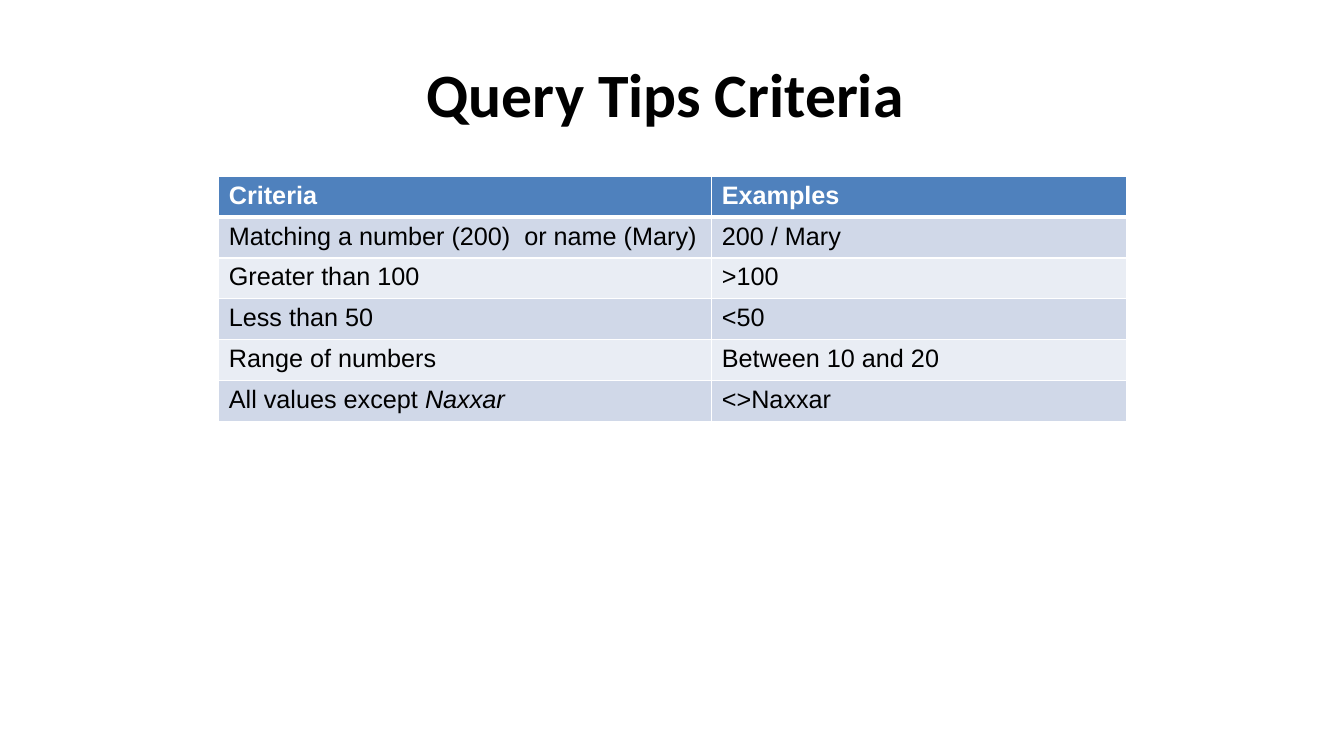
from dataclasses import dataclass

from lxml import etree
from pptx import Presentation
from pptx.dml.color import RGBColor
from pptx.enum import text
from pptx.oxml import ns
from pptx.util import Inches, Pt

TITLE = "Query Tips Criteria "
ROWS = [
    ("Criteria", "Examples"),
    ("Matching a number (200)  or name (Mary)", "200 / Mary"),
    ("Greater than 100", ">100"),
    ("Less than 50", "<50"),
    ("Range of numbers", "Between 10 and 20"),
    ("All values except *Naxxar*", "<>Naxxar"),
]
WIDTHS = (4.89, 4.11)
HEIGHT = 0.405


@dataclass
class Theme:
    head: str = "4F81BD"
    bands: tuple = ("E9EDF4", "D0D8E8")
    ink: str = "000000"
    white: str = "FFFFFF"
    title_font: str = "Calibri"
    body_font: str = "Arial"
    title_size: int = 44
    body_size: int = 18
    thin: int = 1
    thick: int = 3


theme = Theme()


def style(font, name, size, color, bold):
    font.name, font.size, font.bold = name, Pt(size), bold
    font.color.rgb = RGBColor.from_string(color)


def border(cell, row):
    props = cell._tc.get_or_add_tcPr()
    for side in "LRTB":
        heavy = (row, side) in ((0, "B"), (1, "T"))
        width = theme.thick if heavy else theme.thin
        line = etree.SubElement(props, ns.qn(f"a:ln{side}"), w=str(Pt(width)))
        fill = etree.SubElement(line, ns.qn("a:solidFill"))
        etree.SubElement(fill, ns.qn("a:srgbClr"), val=theme.white)


def fill_cell(cell, words, row):
    head = row == 0
    border(cell, row)
    cell.fill.solid()
    color = theme.head if head else theme.bands[row % 2]
    cell.fill.fore_color.rgb = RGBColor.from_string(color)
    para = cell.text_frame.paragraphs[0]
    for i, part in enumerate(words.split("*")):
        if part:
            run = para.add_run()
            run.text = part
            ink = theme.white if head else theme.ink
            style(run.font, theme.body_font, theme.body_size, ink, head)
            run.font.italic = i % 2 == 1


def add_title(slide):
    title = slide.shapes.title
    title.left, title.top = Inches(0.67), Inches(0.3)
    title.width, title.height = Inches(12), Inches(1.25)
    frame = title.text_frame
    frame.text = TITLE
    frame.vertical_anchor = text.MSO_ANCHOR.MIDDLE
    para = frame.paragraphs[0]
    para.alignment = text.PP_ALIGN.CENTER
    style(para.runs[0].font, theme.title_font, theme.title_size, theme.ink, True)


def add_tips(slide):
    frame = slide.shapes.add_table(
        len(ROWS), len(WIDTHS), Inches(2.17), Inches(1.75),
        Inches(sum(WIDTHS)), Inches(HEIGHT * len(ROWS)))
    table = frame.table
    for col, width in zip(table.columns, WIDTHS):
        col.width = Inches(width)
    for r, row in enumerate(ROWS):
        table.rows[r].height = Inches(HEIGHT)
        for c, words in enumerate(row):
            fill_cell(table.cell(r, c), words, r)


def main():
    """Build the query criteria slide."""
    deck = Presentation()
    deck.slide_width, deck.slide_height = Inches(13.33), Inches(7.5)
    slide = deck.slides.add_slide(deck.slide_layouts[5])
    add_title(slide)
    add_tips(slide)
    deck.save("out.pptx")


if __name__ == "__main__":
    main()
